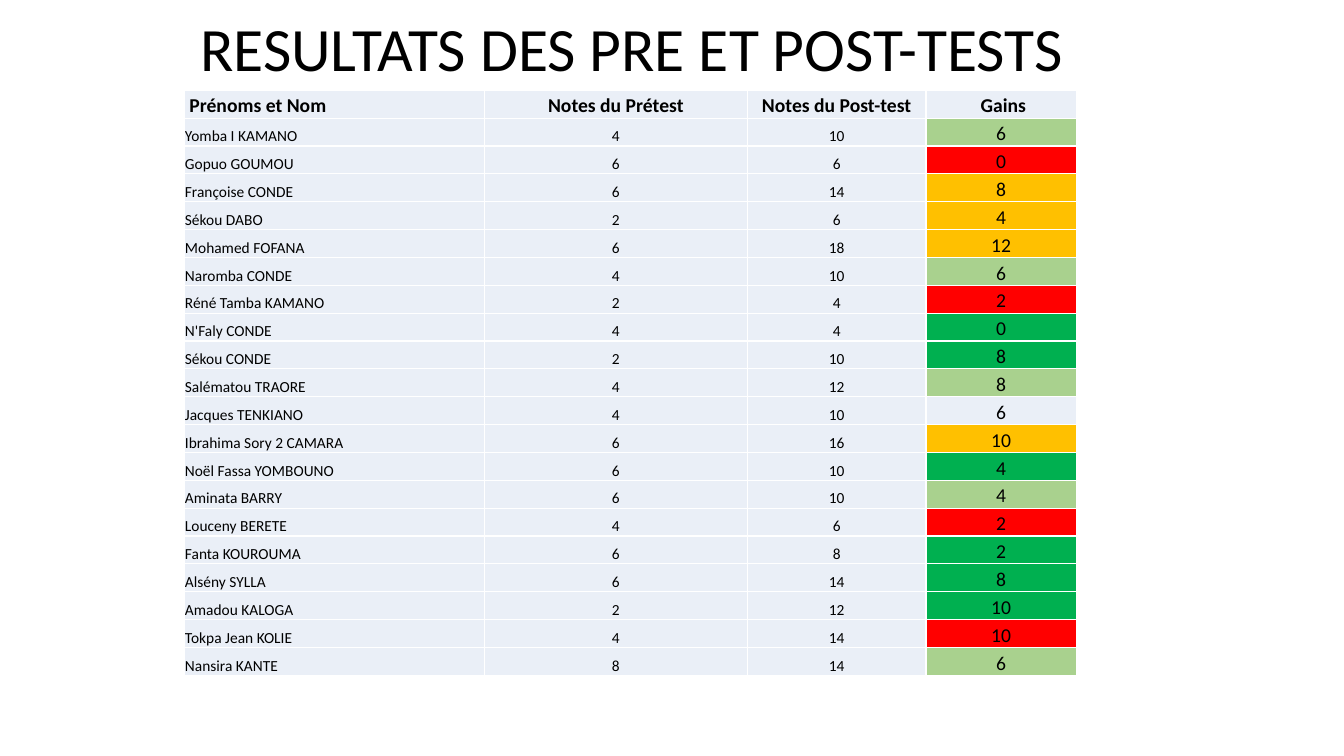
from dataclasses import dataclass

from lxml.etree import SubElement
from pptx import Presentation
from pptx.dml.color import RGBColor
from pptx.enum.text import MSO_ANCHOR, PP_ALIGN
from pptx.oxml.ns import qn
from pptx.slide import Slide
from pptx.table import _Cell
from pptx.text.text import _Paragraph
from pptx.util import Pt

COLORS = {
    "text": "000000",
    "border": "FFFFFF",
    "pale": "EAEFF7",
    "light_green": "A9D18E",
    "green": "00B050",
    "amber": "FFC000",
    "red": "FF0000",
}
FONT = "Calibri"
HEADER_SIZE = GAIN_SIZE = 14
BODY_SIZE = 11
HEADER_HEIGHT, ROW_HEIGHT = 19.6, 19.9
CELL_MARGIN = 0.7
HEADER_INDENT = 3.2


@dataclass
class Column:
    header: str
    width: float
    align: PP_ALIGN = PP_ALIGN.CENTER
    header_indent: float = 0


@dataclass
class Result:
    name: str
    pretest: int
    posttest: int
    gain_fill: str

    @property
    def gain(self) -> int:
        return self.posttest - self.pretest


COLUMNS = [
    Column("Prénoms et Nom", 214.5, PP_ALIGN.LEFT, HEADER_INDENT),
    Column("Notes du Prétest", 188),
    Column("Notes du Post-test", 127.5),
    Column("Gains", 107.3, header_indent=HEADER_INDENT),
]
RESULTS = [
    Result("Yomba I KAMANO", 4, 10, "light_green"),
    Result("Gopuo GOUMOU", 6, 6, "red"),
    Result("Françoise CONDE", 6, 14, "amber"),
    Result("Sékou DABO", 2, 6, "amber"),
    Result("Mohamed FOFANA", 6, 18, "amber"),
    Result("Naromba CONDE", 4, 10, "light_green"),
    Result("Réné Tamba KAMANO", 2, 4, "red"),
    Result("N'Faly CONDE", 4, 4, "green"),
    Result("Sékou CONDE", 2, 10, "green"),
    Result("Salématou TRAORE", 4, 12, "light_green"),
    Result("Jacques TENKIANO", 4, 10, "pale"),
    Result("Ibrahima Sory 2 CAMARA", 6, 16, "amber"),
    Result("Noël Fassa YOMBOUNO", 6, 10, "green"),
    Result("Aminata BARRY", 6, 10, "light_green"),
    Result("Louceny BERETE", 4, 6, "red"),
    Result("Fanta KOUROUMA", 6, 8, "green"),
    Result("Alsény SYLLA", 6, 14, "green"),
    Result("Amadou KALOGA", 2, 12, "green"),
    Result("Tokpa Jean KOLIE", 4, 14, "red"),
    Result("Nansira KANTE", 8, 14, "light_green"),
]


def add_run(paragraph: _Paragraph, text: str, size: float, bold: bool = False) -> None:
    run = paragraph.add_run()
    run.text = text
    run.font.name = FONT
    run.font.size = Pt(size)
    run.font.bold = bold
    run.font.color.rgb = RGBColor.from_string(COLORS["text"])


def add_borders(cell: _Cell) -> None:
    properties = cell._tc.get_or_add_tcPr()
    for side in ("a:lnL", "a:lnR", "a:lnT", "a:lnB"):
        line = SubElement(properties, qn(side), w=str(Pt(1)))
        fill = SubElement(line, qn("a:solidFill"))
        SubElement(fill, qn("a:srgbClr"), val=COLORS["border"])


def fill_cell(cell: _Cell, text: str, size: float, align: PP_ALIGN,
              fill: str = "pale", bold: bool = False, indent: float = 0) -> None:
    add_borders(cell)
    cell.fill.solid()
    cell.fill.fore_color.rgb = RGBColor.from_string(COLORS[fill])
    cell.vertical_anchor = MSO_ANCHOR.BOTTOM
    cell.margin_left = Pt(CELL_MARGIN + indent)
    cell.margin_right = cell.margin_top = Pt(CELL_MARGIN)
    cell.margin_bottom = Pt(0)
    paragraph = cell.text_frame.paragraphs[0]
    paragraph.alignment = align
    add_run(paragraph, text, size, bold)


def add_title(slide: Slide) -> None:
    title = slide.shapes.add_textbox(Pt(66), Pt(9.4), Pt(828), Pt(55.4))
    frame = title.text_frame
    frame.word_wrap = True
    frame.vertical_anchor = MSO_ANCHOR.MIDDLE
    frame.margin_left = Pt(77)
    paragraph = frame.paragraphs[0]
    paragraph.line_spacing = 0.9
    add_run(paragraph, "RESULTATS DES PRE ET POST-TESTS", 44)


def add_results_table(slide: Slide) -> None:
    width = sum(column.width for column in COLUMNS)
    height = HEADER_HEIGHT + ROW_HEIGHT * len(RESULTS)
    table = slide.shapes.add_table(len(RESULTS) + 1, len(COLUMNS), Pt(131.4), Pt(64.8),
                                   Pt(width), Pt(height)).table
    table.first_row = table.horz_banding = False
    for row in table.rows:
        row.height = Pt(ROW_HEIGHT)
    table.rows[0].height = Pt(HEADER_HEIGHT)

    for index, column in enumerate(COLUMNS):
        table.columns[index].width = Pt(column.width)
        fill_cell(table.cell(0, index), column.header, HEADER_SIZE, column.align,
                  bold=True, indent=column.header_indent)

    gain_index = len(COLUMNS) - 1
    for row_index, result in enumerate(RESULTS, start=1):
        values = (result.name, result.pretest, result.posttest)
        for index, value in enumerate(values):
            fill_cell(table.cell(row_index, index), str(value), BODY_SIZE,
                      COLUMNS[index].align)
        fill_cell(table.cell(row_index, gain_index), str(result.gain), GAIN_SIZE,
                  COLUMNS[gain_index].align, result.gain_fill)


def main() -> None:
    presentation = Presentation()
    presentation.slide_width, presentation.slide_height = Pt(960), Pt(540)
    slide = presentation.slides.add_slide(presentation.slide_layouts[6])
    add_title(slide)
    add_results_table(slide)
    presentation.save("out.pptx")


if __name__ == "__main__":
    main()
